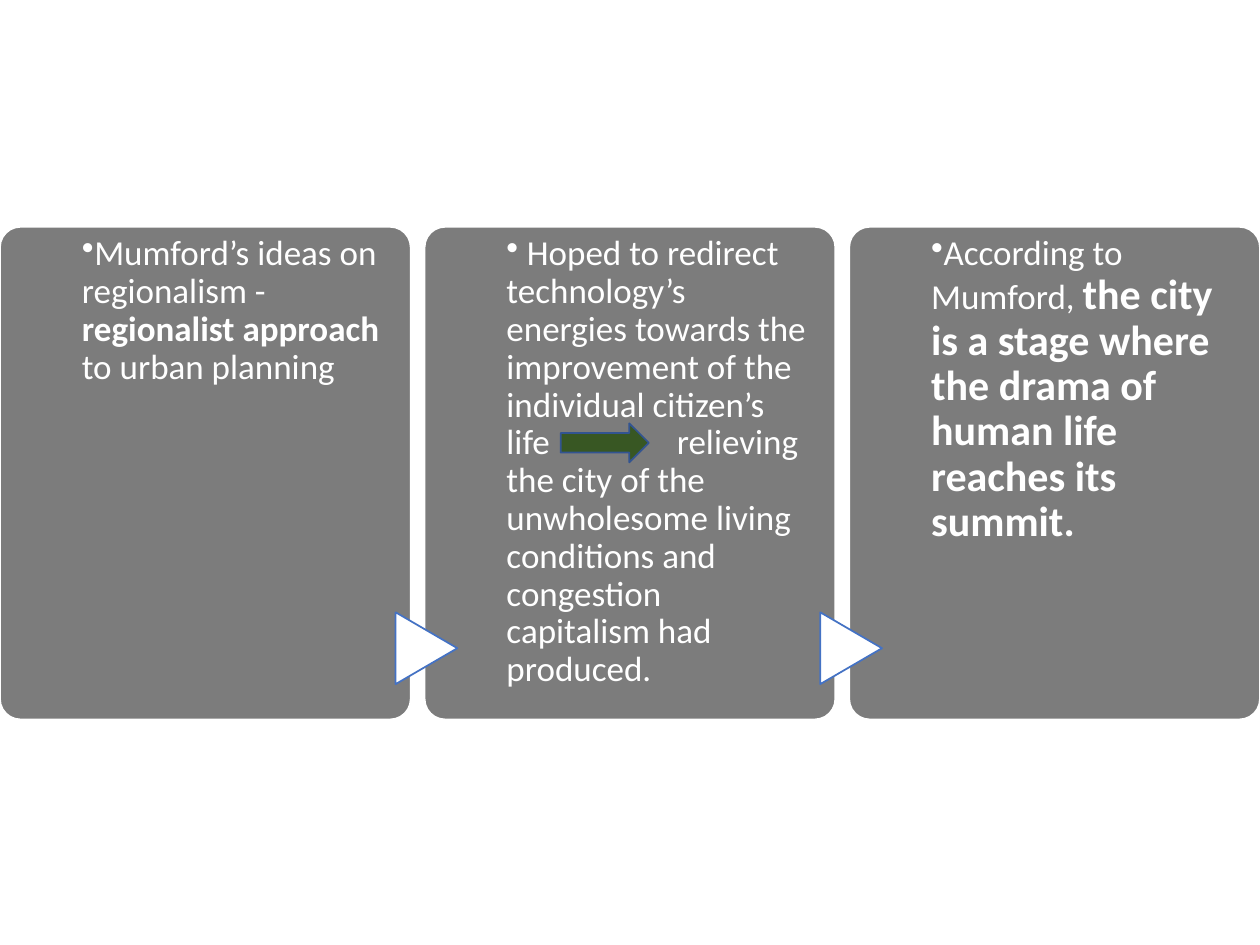
import pptx
import pptx.util
import pptx.dml.color
import pptx.enum.shapes
import pptx.enum.text
from dataclasses import dataclass
from lxml import etree
from pptx.util import Inches

Kind = pptx.enum.shapes.MSO_SHAPE


@dataclass(frozen=True)
class Theme:
    font: str = "Calibri"
    body: int = 20
    large: int = 24
    white: str = "FFFFFF"
    card: str = "7C7C7C"
    blue: str = "4472C4"
    green: str = "385723"
    edge: str = "325491"


theme = Theme()
color = pptx.dml.color.RGBColor.from_string


def add_box(kind, left, top, width, height, fill, line):
    box = slide.shapes.add_shape(
        kind, Inches(left), Inches(top), Inches(width), Inches(height))
    box.shadow.inherit = False
    box.fill.solid()
    box.fill.fore_color.rgb = color(fill)
    box.line.color.rgb = color(line)
    box.line.width = pptx.util.Pt(1)
    return box


def add_run(para, text, size=theme.body, bold=False, gap=0):
    """Append a run; gap is extra letter spacing in points."""
    run = para.add_run()
    run.text = text
    run.font.name = theme.font
    run.font.size = pptx.util.Pt(size)
    run.font.bold = bold
    run.font.color.rgb = color(theme.white)
    if gap:
        run.font._element.set("spc", str(gap * 100))


deck = pptx.Presentation()
deck.slide_width, deck.slide_height = Inches(10), Inches(7.5)
slide = deck.slides.add_slide(deck.slide_layouts[6])

cards = [
    [("Mumford’s ideas on regionalism - ", {}),
     ("regionalist approach", {"bold": True}),
     (" to urban planning", {})],
    [(" Hoped to redirect technology’s energies towards the improvement "
      "of the individual citizen’s life", {}),
     (" ", {"gap": 68}),  # room for the green arrow
     ("relieving the city of the unwholesome living conditions and "
      "congestion capitalism had produced.", {})],
    [("According to Mumford, ", {}),
     ("the city is a stage where the drama of human life reaches its summit.",
      {"size": theme.large, "bold": True})],
]
top, width, height, step = 1.8, 3.26, 3.91, 3.37

for i, runs in enumerate(cards):
    left = i * step
    card = add_box(Kind.ROUNDED_RECTANGLE, left, top, width, height,
                   theme.card, theme.white)
    card.adjustments[0] = 0.05
    if i:
        mark = add_box(Kind.FLOWCHART_EXTRACT, left - 0.27, 4.9, 0.57, 0.49,
                       theme.white, theme.blue)
        mark.rotation = 90

    label = slide.shapes.add_textbox(
        Inches(left + 0.65), Inches(top), Inches(2.43), Inches(height))
    frame = label.text_frame
    frame.word_wrap = True
    frame.vertical_anchor = pptx.enum.text.MSO_ANCHOR.TOP
    frame.margin_left = frame.margin_right = frame.margin_bottom = 0
    frame.margin_top = Inches(0.07)
    para = frame.paragraphs[0]
    para.line_spacing = 0.9
    for text, style in runs:
        add_run(para, text, **style)
    # The bullet hangs to the left of the text column
    props = para._p.get_or_add_pPr()
    props.set("marL", "0")
    props.set("indent", str(-Inches(0.2)))
    bullet = etree.SubElement(props, pptx.oxml.ns.qn("a:buChar"))
    bullet.set("char", "•")

add_box(Kind.RIGHT_ARROW, 4.45, 3.36, 0.7, 0.31, theme.green, theme.edge)

deck.save("out.pptx")
